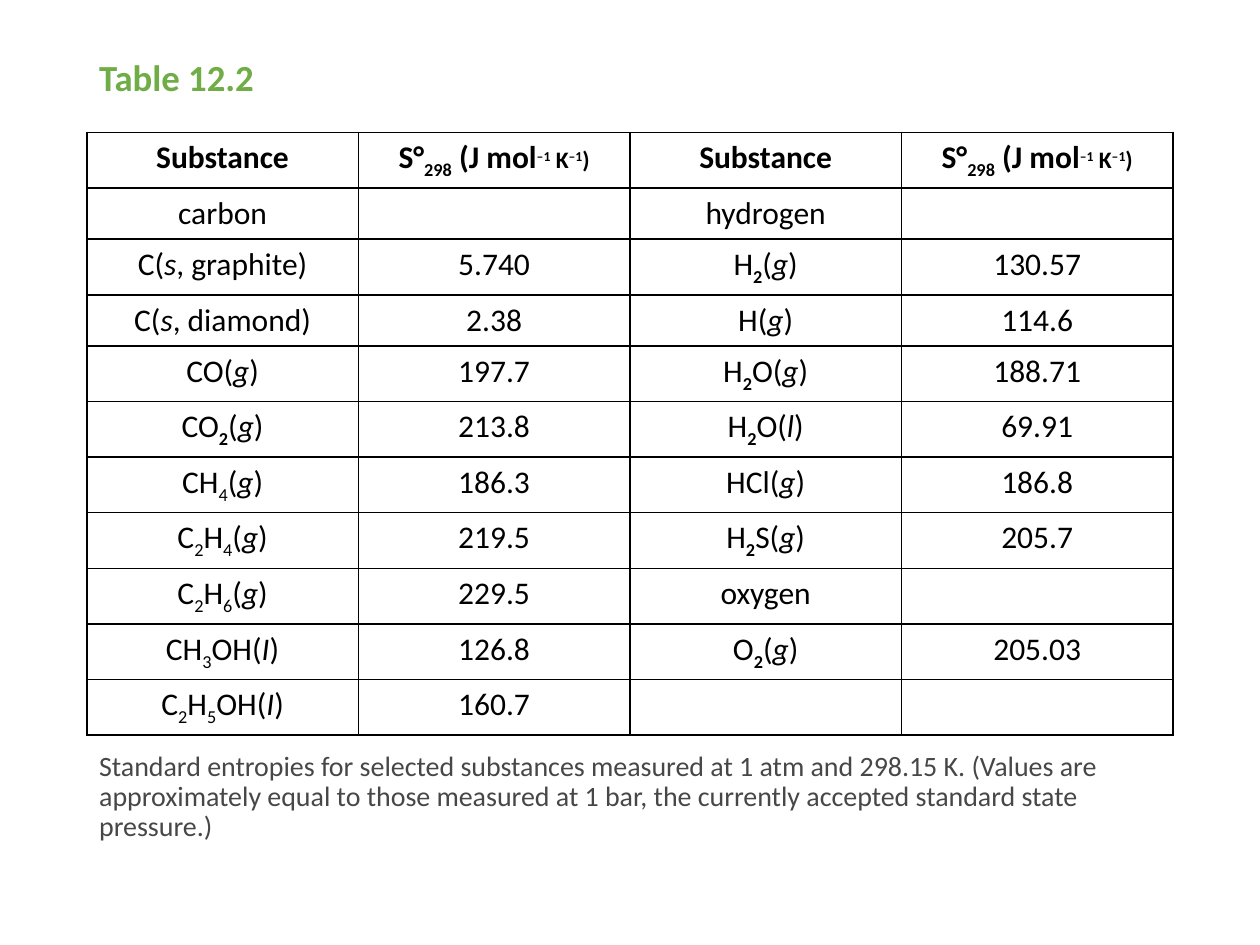
from lxml import etree
from pptx import Presentation
from pptx.dml.color import RGBColor
from pptx.enum import text
from pptx.oxml import ns
from pptx.util import Cm, Pt

COLORS = {"title": "70AD47", "table": "000000", "caption": "464846"}

TITLE = "Table 12.2"
CAPTION = (
    "Standard entropies for selected substances measured at 1 atm and 298.15 K. "
    "(Values are approximately equal to those measured at 1 bar, the currently "
    "accepted standard state pressure.)"
)

# Spans are parted by "|"; a leading mark gives the span its style.
MARKS = {
    "_": {"baseline": -25000},
    "*": {"baseline": -25000, "bold": True},
    "^": {"baseline": 30000, "size": Pt(13.5)},
    "~": {"size": Pt(13.5)},
    "/": {"italic": True},
}
ENTROPY = "S°|_298| (J mol|^–1|~ K|^–1|~)"
ROWS = [
    ("Substance", ENTROPY, "Substance", ENTROPY),
    ("carbon", "", "hydrogen", ""),
    ("C(|/s|, graphite)", "5.740", "H|*2|(|/g|)", "130.57"),
    ("C(|/s|, diamond)", "2.38", "H(|/g|)", "114.6"),
    ("CO(|/g|)", "197.7", "H|*2|O(|/g|)", "188.71"),
    ("CO|*2|(|/g|)", "213.8", "H|*2|O(|/l|)", "69.91"),
    ("CH|_4|(|/g|)", "186.3", "HCl(|/g|)", "186.8"),
    ("C|_2|H|_4|(|/g|)", "219.5", "H|*2|S(|/g|)", "205.7"),
    ("C|_2|H|_6|(|/g|)", "229.5", "oxygen", ""),
    ("CH|_3|OH(|/I|)", "126.8", "O|*2|(|/g|)", "205.03"),
    ("C|_2|H|_5|OH(|/I|)", "160.7", "", ""),
]

LEFT, WIDTH = Cm(1.75), Cm(21.9)
TABLE_TOP, ROW_HEIGHT = Cm(2.67), Cm(1.03)


def set_font(font, color, **values):
    font.name = "Calibri"
    font.color.rgb = RGBColor.from_string(COLORS[color])
    for name, value in values.items():
        setattr(font, name, value)


def add_text(page, top, height, words, color, anchor, **values):
    box = page.shapes.add_textbox(LEFT, top, WIDTH, height)
    frame = box.text_frame
    frame.word_wrap = True
    frame.vertical_anchor = anchor
    para = frame.paragraphs[0]
    para.line_spacing = 0.9
    span = para.add_run()
    span.text = words
    set_font(span.font, color, **values)


def write_cell(cell, marked, bold):
    para = cell.text_frame.paragraphs[0]
    para.alignment = text.PP_ALIGN.CENTER
    para.font.size = Pt(18)
    for part in filter(None, marked.split("|")):
        style = {"size": Pt(18), "bold": bold, **MARKS.get(part[0], {})}
        baseline = style.pop("baseline", 0)
        span = para.add_run()
        span.text = part[1:] if part[0] in MARKS else part
        set_font(span.font, "table", **style)
        if baseline:
            span._r.get_or_add_rPr().set("baseline", str(baseline))


def add_borders(cell):
    properties = cell._tc.get_or_add_tcPr()
    for place, side in enumerate(("lnL", "lnR", "lnT", "lnB")):
        line = etree.Element(ns.qn(f"a:{side}"), w=str(Pt(1)))
        fill = etree.SubElement(line, ns.qn("a:solidFill"))
        etree.SubElement(fill, ns.qn("a:srgbClr"), val=COLORS["table"])
        properties.insert(place, line)


def add_entropy_table(page):
    columns = len(ROWS[0])
    table = page.shapes.add_table(
        len(ROWS), columns, LEFT, TABLE_TOP, WIDTH, ROW_HEIGHT * len(ROWS)
    ).table
    table.first_row = table.horz_banding = False
    for column in table.columns:
        column.width = WIDTH // columns
    for r, row in enumerate(ROWS):
        table.rows[r].height = ROW_HEIGHT
        for c, marked in enumerate(row):
            cell = table.cell(r, c)
            cell.fill.background()
            add_borders(cell)
            write_cell(cell, marked, bold=r == 0)


def main():
    deck = Presentation()
    deck.slide_width, deck.slide_height = Cm(25.4), Cm(19.05)
    page = deck.slides.add_slide(deck.slide_layouts[6])
    add_text(page, Cm(1.02), Cm(1.17), TITLE, "title",
             text.MSO_ANCHOR.MIDDLE, size=Pt(21), bold=True)
    add_entropy_table(page)
    add_text(page, Cm(15.04), Cm(2.16), CAPTION, "caption",
             text.MSO_ANCHOR.TOP, size=Pt(16))
    deck.save("out.pptx")


if __name__ == "__main__":
    main()
